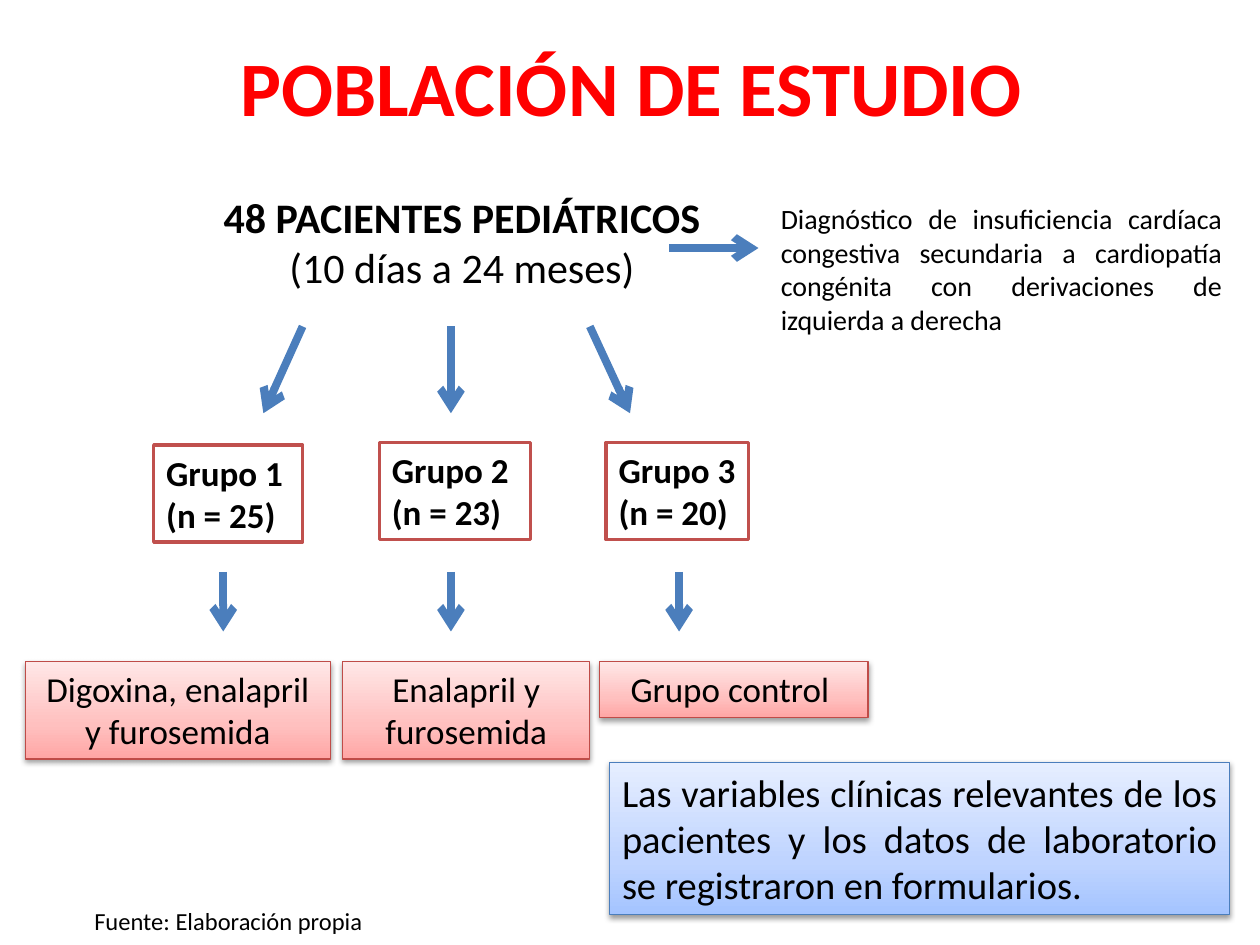
from copy import deepcopy

from lxml.etree import SubElement
from pptx import Presentation
from pptx.dml.color import RGBColor
from pptx.enum.shapes import MSO_CONNECTOR, MSO_SHAPE
from pptx.enum.text import MSO_ANCHOR, MSO_AUTO_SIZE, PP_ALIGN as ALIGN
from pptx.oxml import parse_xml
from pptx.oxml.ns import nsdecls, qn
from pptx.util import Cm, Pt

rgb = RGBColor.from_string
BLUE = "4B7EBC"
PINK_FADE = ["FFA6A5", "FFC0BF", "FFE7E7"]
BLUE_FADE = ["A4C4FF", "BFD4FF", "E6EEFF"]
SHADOW = (
    f'<a:effectLst {nsdecls("a")}>'
    '<a:outerShdw blurRad="40000" dist="20000" dir="5400000" rotWithShape="0">'
    '<a:srgbClr val="000000"><a:alpha val="38000"/></a:srgbClr>'
    "</a:outerShdw></a:effectLst>"
)


def add_box(shapes, place, lines, size, align, bold=(), color="000000",
            border=None, fade=None, **frame_format):
    """Add text at place (cm); a border makes it a rectangle, a fade shades it.

    bold holds the indexes of the bold lines.
    """
    lengths = [Cm(value) for value in place]
    if border:
        shape = shapes.add_shape(MSO_SHAPE.RECTANGLE, *lengths)
        shape.line.color.rgb = rgb(border)
        shape.line.width = Pt(0.75 if fade else 2)
        shape.shadow.inherit = False
    else:
        shape = shapes.add_textbox(*lengths)
    if fade:
        shape.fill.gradient()
        shape.fill.gradient_angle = 90
        first_stop = shape._element.spPr.find(".//" + qn("a:gs"))
        first_stop.addnext(deepcopy(first_stop))
        for stop, position, shade in zip(shape.fill.gradient_stops, (0, 0.35, 1), fade):
            stop.position = position
            stop.color.rgb = rgb(shade)
        properties = shape._element.spPr
        properties.replace(properties.find(qn("a:effectLst")), parse_xml(SHADOW))
    elif border:
        shape.fill.solid()
        shape.fill.fore_color.rgb = rgb("FFFFFF")

    frame = shape.text_frame
    frame_values = {"word_wrap": True, "vertical_anchor": MSO_ANCHOR.TOP,
                    "auto_size": MSO_AUTO_SIZE.SHAPE_TO_FIT_TEXT} | frame_format
    for name, value in frame_values.items():
        setattr(frame, name, value)
    frame.text = "\n".join(lines)
    for index, paragraph in enumerate(frame.paragraphs):
        paragraph.alignment = align
        font = paragraph.runs[0].font
        font_values = {"name": "Calibri", "size": Pt(size), "bold": index in bold}
        for name, value in font_values.items():
            setattr(font, name, value)
        font.color.rgb = rgb(color)


def add_arrow(shapes, *ends):
    arrow = shapes.add_connector(MSO_CONNECTOR.STRAIGHT, *[Cm(value) for value in ends])
    arrow.line.color.rgb = rgb(BLUE)
    arrow.line.width = Pt(4.5)
    SubElement(arrow.line._get_or_add_ln(), qn("a:tailEnd"), type="arrow")
    SubElement(arrow._element.spPr, qn("a:effectLst"))


presentation = Presentation()
presentation.slide_width = Cm(25.4)
presentation.slide_height = Cm(19.05)
slide = presentation.slides.add_slide(presentation.slide_layouts[6])
shapes = slide.shapes

# Title and studied population
add_box(shapes, (1.3, 0.13, 22.86, 3.18), ["POBLACIÓN DE ESTUDIO"], 44, ALIGN.CENTER,
        bold=(0,), color="FF0000", vertical_anchor=MSO_ANCHOR.MIDDLE,
        auto_size=MSO_AUTO_SIZE.NONE)
add_box(shapes, (3.51, 3.73, 11.61, 2.31),
        ["48 PACIENTES PEDIÁTRICOS", "(10 días a 24 meses)"], 24, ALIGN.CENTER, bold=(0,))
add_box(shapes, (15.49, 3.94, 9.4, 3),
        ["Diagnóstico de insuficiencia cardíaca congestiva secundaria a cardiopatía "
         "congénita con derivaciones de izquierda a derecha"], 16, ALIGN.JUSTIFY)
add_arrow(shapes, 13.49, 5, 15.29, 5)

# Groups: patients, box, treatment; (left, top, width, height) and arrow x values
groups = [
    (25, (3.1, 8.97, 3, 1.96), True, "Digoxina, enalapril y furosemida",
     (0.51, 13.34, 6.15, 1.96), (6.1, 5.31, 4.5)),
    (23, (7.65, 8.92, 3.05, 1.96), False, "Enalapril y furosemida",
     (6.91, 13.34, 4.98, 1.96), (9.09, 9.09, 9.09)),
    (20, (12.22, 8.92, 2.87, 1.96), False, "Grupo control ",
     (12.09, 13.34, 5.41, 1.12), (11.89, 12.7, 13.69)),
]
for number, group in enumerate(groups, start=1):
    patients, group_place, wrap, treatment, treatment_place, arrow_x = group
    start_x, end_x, lower_x = arrow_x
    members = shapes.add_group_shape().shapes
    add_box(members, group_place, [f"Grupo {number}", f"(n = {patients})"], 20,
            ALIGN.LEFT, bold=(0, 1), border="C0504D", word_wrap=wrap)
    add_box(members, treatment_place, [treatment], 20, ALIGN.CENTER,
            border="BF4C48", fade=PINK_FADE)
    add_arrow(members, start_x, 6.58, end_x, 8.33)
    add_arrow(members, lower_x, 11.53, lower_x, 12.73)

# Recorded data and source
add_box(shapes, (12.29, 15.37, 12.5, 3.07),
        ["Las variables clínicas relevantes de los pacientes y los datos de laboratorio "
         "se registraron en formularios."], 22, ALIGN.JUSTIFY, border=BLUE, fade=BLUE_FADE)
add_box(shapes, (0.3, 18.14, 8.61, 0.86), ["Fuente: Elaboración propia"], 14, ALIGN.CENTER)

presentation.save("out.pptx")
